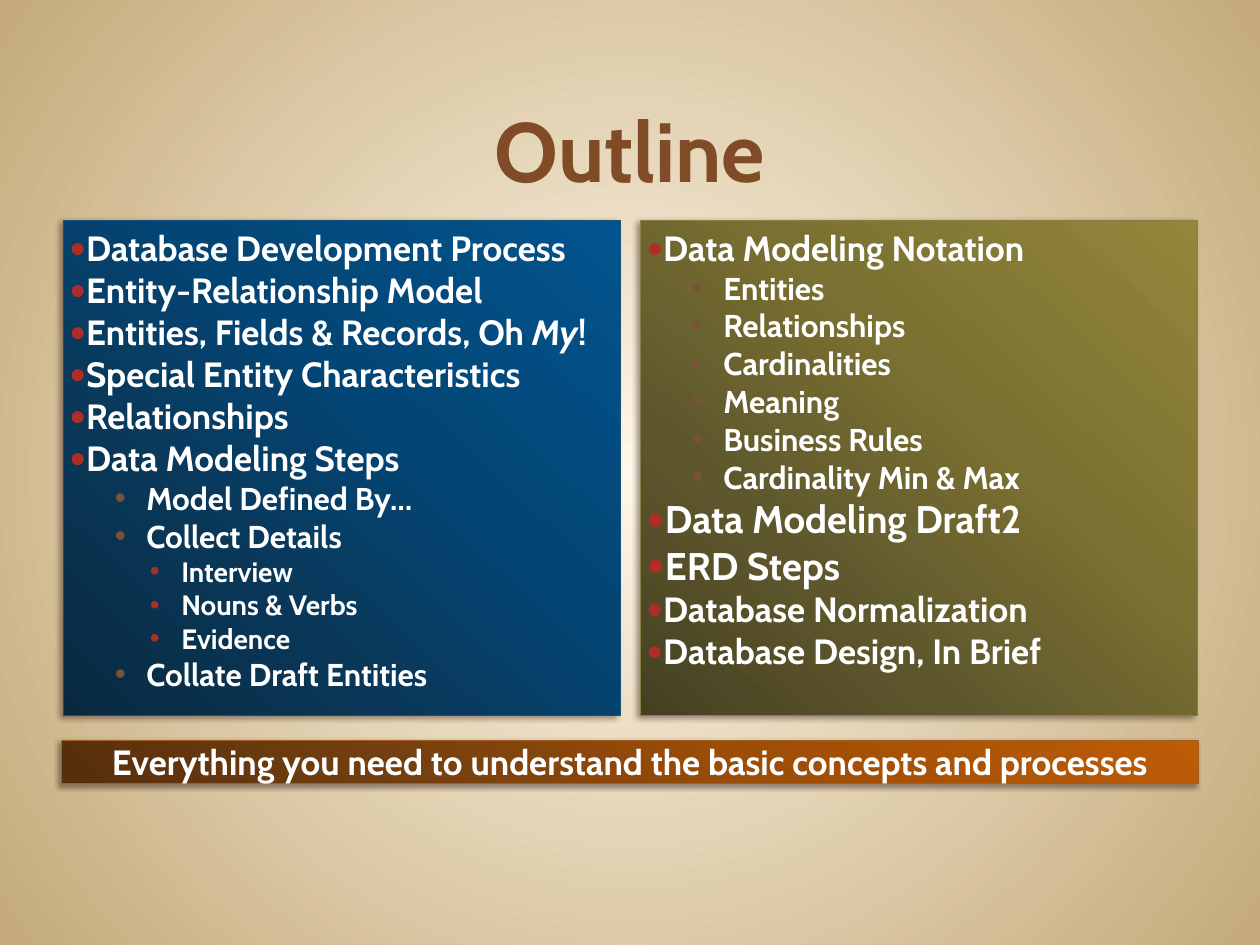
from dataclasses import dataclass

from lxml import etree
from pptx import Presentation
from pptx import util as u
from pptx.dml.color import RGBColor
from pptx.enum import shapes, text
from pptx.oxml import ns

Pt = u.Pt


@dataclass(frozen=True)
class Theme:
    font: str = "Cabin"
    title: str = "804B26"
    body: str = "FFFFFF"
    bullet_main: str = "AD2E27"
    bullet_sub: str = "795339"
    shadow: str = "1A0000"
    backdrop: tuple = ((0, "FFF7E8"), (100, "C4AA7A"))
    blue: tuple = ((0, "03548E"), (40, "034676"), (70, "0A3757"), (100, "082940"))
    blue_edge: str = "17517A"
    olive: tuple = ((0, "94873B"), (40, "7A7031"), (70, "5E572D"), (100, "454021"))
    olive_edge: str = "877E48"
    orange: tuple = ((0, "BD5C07"), (40, "9D4D06"), (70, "743F10"), (100, "562E0C"))
    orange_edge: str = "A35E21"
    title_size: int = 48
    large_size: int = 22
    level_sizes: tuple = (20, 18, 16)


THEME = Theme()

# Per level: left margin and hanging indent in points, bullet, colour, size in %
BULLETS = (
    (0, -21.6, "●", THEME.bullet_main, 80),
    (44, -18, "•", THEME.bullet_sub, 100),
    (64, -18, "•", THEME.bullet_main, 100),
)


def child(parent, tag, **attributes):
    return etree.SubElement(parent, ns.qn(tag), {k: str(v) for k, v in attributes.items()})


def add_color(parent, rgb, alpha=None):
    color = child(parent, "a:srgbClr", val=rgb)
    if alpha is not None:
        child(color, "a:alpha", val=alpha * 1000)


def paint_gradient(fill, owner, stops, angle=None):
    """Linear at the given angle, or circular from the centre without one."""
    fill.gradient()
    gradient = next(owner.iter(ns.qn("a:gradFill")))
    for part in list(gradient):
        gradient.remove(part)
    stop_list = child(gradient, "a:gsLst")
    for position, rgb in stops:
        add_color(child(stop_list, "a:gs", pos=position * 1000), rgb)
    if angle is None:
        circle = child(gradient, "a:path", path="circle")
        child(circle, "a:fillToRect", l=50000, t=50000, r=50000, b=50000)
    else:
        child(gradient, "a:lin", ang=angle * 60000, scaled=0)


def add_shadow(shape):
    shape.shadow.inherit = False
    effects = shape.element.spPr.find(ns.qn("a:effectLst"))
    shadow = child(effects, "a:outerShdw", blurRad=Pt(3.1), dist=Pt(2),
                   dir=150 * 60000, algn="tl", rotWithShape=0)
    add_color(shadow, THEME.shadow, alpha=40)


def add_bullet(paragraph, level):
    margin, indent, mark, rgb, percent = BULLETS[level]
    paragraph.level = level
    properties = paragraph._p.get_or_add_pPr()
    properties.set("marL", str(Pt(margin)))
    properties.set("indent", str(Pt(indent)))
    add_color(child(properties, "a:buClr"), rgb)
    child(properties, "a:buSzPct", val=percent * 1000)
    child(properties, "a:buFont", typeface="Arial")
    child(properties, "a:buChar", char=mark)


def write(paragraph, words, size=THEME.level_sizes[0], color=THEME.body,
          italic=False, align=text.PP_ALIGN.LEFT):
    paragraph.alignment = align
    run = paragraph.add_run()
    run.text = words
    font = run.font
    font.name, font.size, font.bold, font.italic = THEME.font, Pt(size), True, italic
    font.color.rgb = RGBColor.from_string(color)


def set_frame(shape, inset, anchor):
    frame = shape.text_frame
    frame.word_wrap = True
    frame.vertical_anchor = anchor
    frame.margin_left = frame.margin_right = Pt(inset)
    frame.margin_top = frame.margin_bottom = Pt(inset)
    return frame


class Deck:
    def __init__(self, width, height):
        self.presentation = Presentation()
        self.presentation.slide_width = Pt(width)
        self.presentation.slide_height = Pt(height)
        self.slide = self.presentation.slides.add_slide(self.presentation.slide_layouts[6])

    def backdrop(self, stops):
        paint_gradient(self.slide.background.fill, self.slide.element, stops)

    def title(self, words, *box):
        heading = self.slide.shapes.add_textbox(*map(Pt, box))
        frame = set_frame(heading, 0, text.MSO_ANCHOR.BOTTOM)
        write(frame.paragraphs[0], words, size=THEME.title_size,
              color=THEME.title, align=text.PP_ALIGN.CENTER)

    def block(self, box, stops, edge, inset):
        """Shadowed gradient rectangle; returns its text frame."""
        block = self.slide.shapes.add_shape(shapes.MSO_SHAPE.RECTANGLE, *map(Pt, box))
        paint_gradient(block.fill, block.element, stops, angle=133)
        block.line.color.rgb = RGBColor.from_string(edge)
        block.line.width = Pt(0.39)
        add_shadow(block)
        return set_frame(block, inset, text.MSO_ANCHOR.TOP)

    def outline(self, box, stops, edge, topics):
        """Each topic is (level, words) with an optional size; *stars* mark italics."""
        frame = self.block(box, stops, edge, inset=3.6)
        for index, (level, words, *size) in enumerate(topics):
            paragraph = frame.add_paragraph() if index else frame.paragraphs[0]
            add_bullet(paragraph, level)
            points = size[0] if size else THEME.level_sizes[level]
            for part, piece in enumerate(words.split("*")):
                write(paragraph, piece, size=points, italic=part % 2 == 1)

    def banner(self, words, box, stops, edge):
        frame = self.block(box, stops, edge, inset=0)
        write(frame.paragraphs[0], words, align=text.PP_ALIGN.CENTER)

    def save(self):
        self.presentation.save("out.pptx")


PROCESS_TOPICS = (
    (0, "Database Development Process"),
    (0, "Entity-Relationship Model"),
    (0, "Entities, Fields & Records, Oh *My*!"),
    (0, "Special Entity Characteristics"),
    (0, "Relationships"),
    (0, "Data Modeling Steps"),
    (1, "Model Defined By…"),
    (1, "Collect Details"),
    (2, "Interview"),
    (2, "Nouns & Verbs"),
    (2, "Evidence"),
    (1, "Collate Draft Entities"),
)
NOTATION_TOPICS = (
    (0, "Data Modeling Notation"),
    (1, "Entities"),
    (1, "Relationships"),
    (1, "Cardinalities"),
    (1, "Meaning"),
    (1, "Business Rules"),
    (1, "Cardinality Min & Max"),
    (0, "Data Modeling Draft2", THEME.large_size),
    (0, "ERD Steps", THEME.large_size),
    (0, "Database Normalization"),
    (0, "Database Design, In Brief"),
)


def main():
    width, margin, gap = 720, 36, 11.5
    content = width - 2 * margin
    column, top, height = (content - gap) / 2, 126, 283
    deck = Deck(width, 540)
    deck.backdrop(THEME.backdrop)
    deck.title("Outline", margin, 24, content, 90)
    deck.outline((margin, top, column, height), THEME.blue, THEME.blue_edge, PROCESS_TOPICS)
    deck.outline((margin + column + gap, top, column, height),
                 THEME.olive, THEME.olive_edge, NOTATION_TOPICS)
    deck.banner("Everything you need to understand the basic concepts and processes",
                (margin - 0.7, 423.2, content + 1.4, 24.3), THEME.orange, THEME.orange_edge)
    deck.save()


if __name__ == "__main__":
    main()
